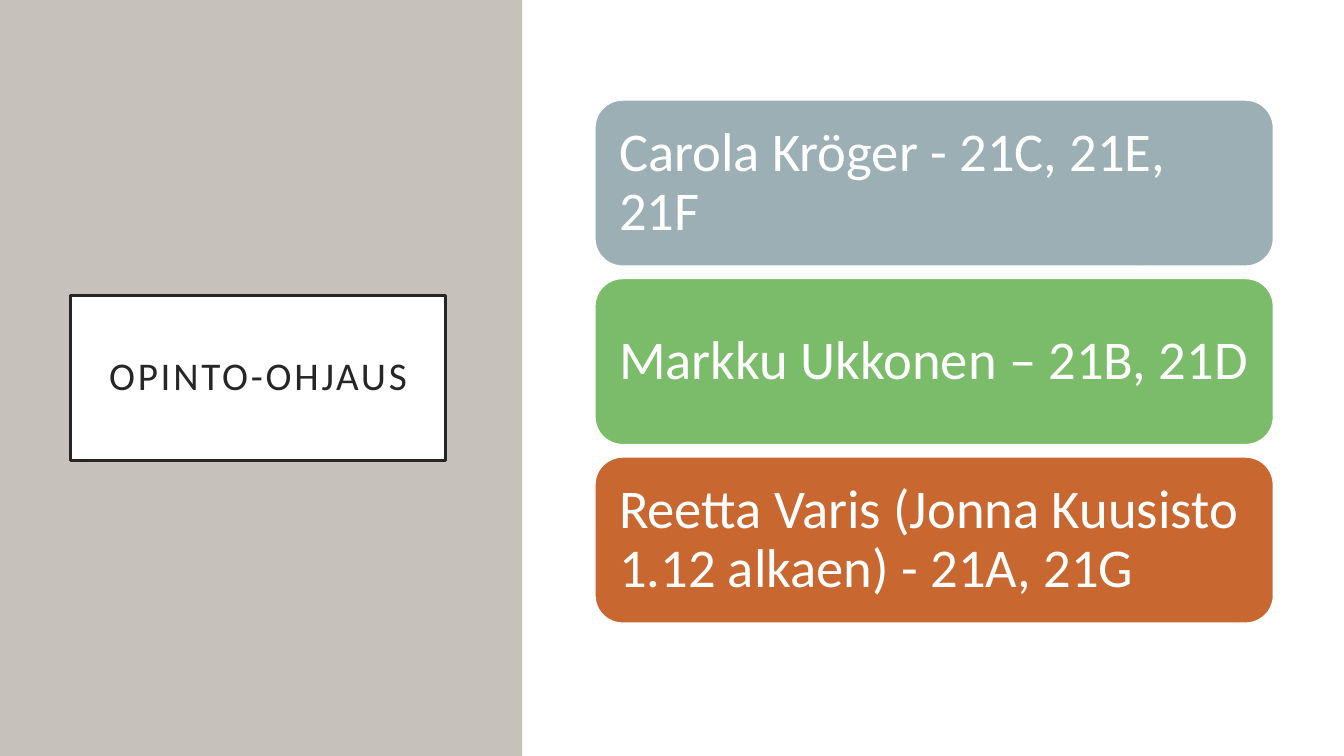
from pptx import Presentation
from pptx.dml.color import RGBColor
from pptx.enum.shapes import MSO_SHAPE
from pptx.enum.text import MSO_ANCHOR, MSO_AUTO_SIZE, PP_ALIGN
from pptx.util import Pt

RECT, ROUNDED = MSO_SHAPE.RECTANGLE, MSO_SHAPE.ROUNDED_RECTANGLE
MIDDLE, NO_FIT = MSO_ANCHOR.MIDDLE, MSO_AUTO_SIZE.NONE
LEFT, CENTER = PP_ALIGN.LEFT, PP_ALIGN.CENTER

COLORS = {
    "white": "FFFFFF",
    "ink": "262626",
    "sand": "C6C1BA",
    "blue_gray": "9BAFB5",
    "green": "7ABC69",
    "orange": "C96731",
}
FONT = "Calibri"
SLIDE_W, SLIDE_H = 960, 540
PANEL_W, RIGHT_X = 373, 374.4
CARD_X, CARD_Y, CARD_W, CARD_H = 425, 71.5, 484.6, 118.6
CARD_STEP = 127.5


def write(shape, text, size, color, align=LEFT, inset=0, spacing=0):
    frame = shape.text_frame
    frame.word_wrap = True
    frame.auto_size = NO_FIT
    frame.vertical_anchor = MIDDLE
    frame.margin_left = frame.margin_right = Pt(inset)
    frame.margin_top = frame.margin_bottom = Pt(inset)
    paragraph = frame.paragraphs[0]
    paragraph.alignment = align
    paragraph.line_spacing = 0.9
    run = paragraph.add_run()
    run.text = text
    run.font.name = FONT
    run.font.size = Pt(size)
    run.font.color.rgb = RGBColor.from_string(COLORS[color])
    if spacing:
        run.font._element.set("spc", str(spacing * 100))


def add_block(kind, x, y, width, height, fill, line=None):
    """Add a filled shape, outlined only when a line colour is given."""
    block = slide.shapes.add_shape(kind, Pt(x), Pt(y), Pt(width), Pt(height))
    block.shadow.inherit = False
    block.fill.solid()
    block.fill.fore_color.rgb = RGBColor.from_string(COLORS[fill])
    if line:
        block.line.color.rgb = RGBColor.from_string(COLORS[line])
        block.line.width = Pt(1)
    else:
        block.line.fill.background()
    return block


deck = Presentation()
deck.slide_width, deck.slide_height = Pt(SLIDE_W), Pt(SLIDE_H)
slide = deck.slides.add_slide(deck.slide_layouts[5])

# Background panels
add_block(RECT, 0, 0, PANEL_W, SLIDE_H, "sand")
add_block(RECT, RIGHT_X, 0, SLIDE_W - RIGHT_X, SLIDE_H, "white")

# Framed title, brought in front of the panels
title = slide.shapes.title
title.element.getparent().append(title.element)
title.left, title.top, title.width, title.height = Pt(50.4), Pt(211), Pt(268), Pt(118)
title.fill.solid()
title.fill.fore_color.rgb = RGBColor.from_string(COLORS["white"])
title.line.color.rgb = RGBColor.from_string(COLORS["ink"])
title.line.width = Pt(2.5)
write(title, "OPINTO-OHJAUS", 28, "ink", align=CENTER, inset=14.4, spacing=2)

# One card per counsellor
counsellors = [
    ("Carola Kröger - 21C, 21E, 21F", "blue_gray"),
    ("Markku Ukkonen – 21B, 21D", "green"),
    ("Reetta Varis (Jonna Kuusisto 1.12 alkaen) - 21A, 21G", "orange"),
]
for row, (groups, fill) in enumerate(counsellors):
    card = add_block(ROUNDED, CARD_X, CARD_Y + row * CARD_STEP, CARD_W, CARD_H, fill, line="white")
    write(card, groups, 39, "white", inset=11.4)

deck.save("out.pptx")
